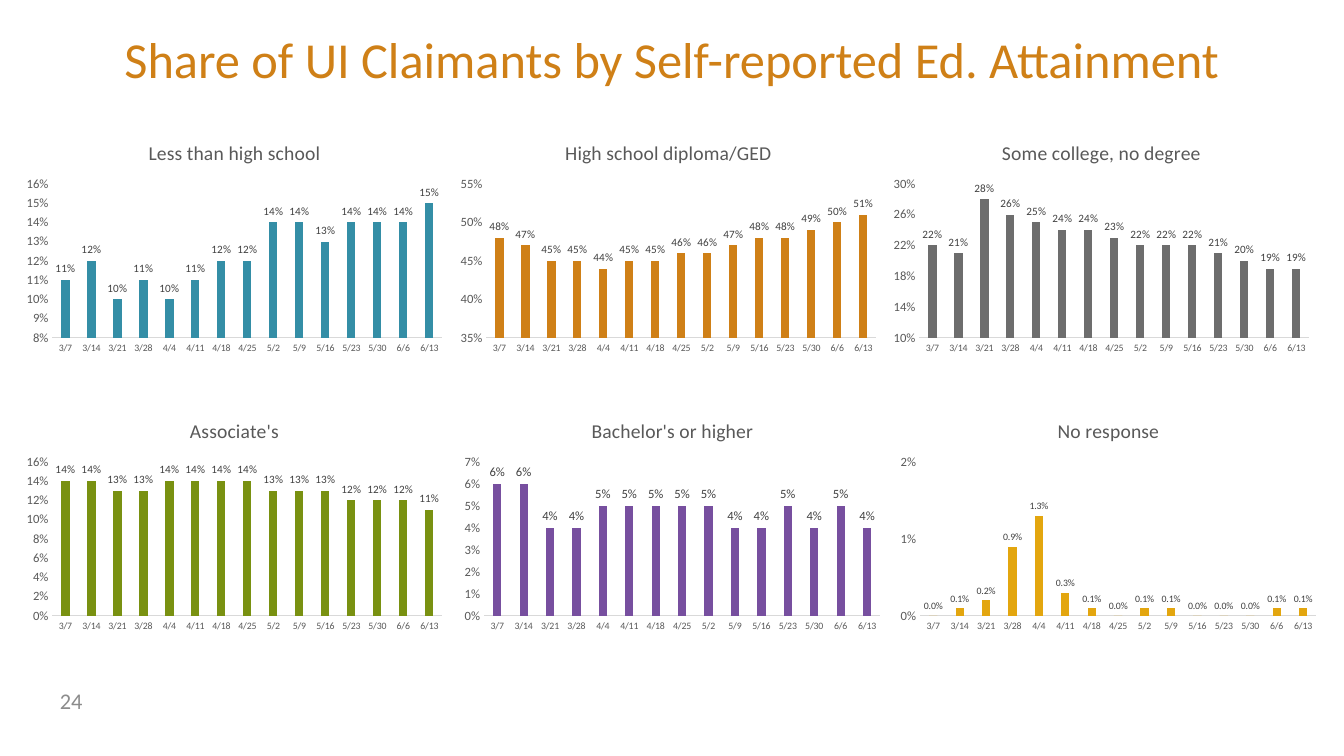
from pptx import Presentation
from pptx.chart.data import CategoryChartData
from pptx.dml.color import RGBColor
from pptx.enum.chart import XL_CHART_TYPE, XL_LABEL_POSITION, XL_TICK_MARK
from pptx.enum.text import MSO_ANCHOR, PP_ALIGN
from pptx.util import Pt

SCALE = 914400 / 100.8
FACE = "Calibri"
TEAL = RGBColor(0x34, 0x8E, 0xA6)
ORANGE = RGBColor(0xCF, 0x80, 0x17)
GRAY = RGBColor(0x6D, 0x6D, 0x6D)
GREEN = RGBColor(0x79, 0x91, 0x11)
PURPLE = RGBColor(0x77, 0x4F, 0x9F)
GOLD = RGBColor(0xE3, 0xA6, 0x0F)
BLACK = RGBColor(0, 0, 0)
DARK = RGBColor(0x40, 0x40, 0x40)
MUTED = RGBColor(0x59, 0x59, 0x59)
PALE = RGBColor(0x8C, 0x8C, 0x8C)
RULE = RGBColor(0xD9, 0xD9, 0xD9)


def px(*sizes):
    return [round(size * SCALE) for size in sizes]


def style(font, size, color):
    font.name, font.size, font.bold = FACE, Pt(size), False
    font.color.rgb = color


deck = Presentation()
deck.slide_width, deck.slide_height = px(1344, 756)
slide = deck.slides.add_slide(deck.slide_layouts[5])

# Title
title = slide.shapes.title
title.left, title.top, title.width, title.height = px(0, 30, 1344, 74)
frame = title.text_frame
frame.text = "Share of UI Claimants by Self-reported Ed. Attainment"
frame.margin_left = frame.margin_right = frame.margin_top = frame.margin_bottom = 0
frame.vertical_anchor = MSO_ANCHOR.MIDDLE
head = frame.paragraphs[0]
head.alignment = PP_ALIGN.CENTER
head.line_spacing = Pt(31)
style(head.runs[0].font, 36, ORANGE)

# Page number
frame = slide.shapes.add_textbox(*px(50, 681, 302, 40)).text_frame
frame.word_wrap = True
frame.vertical_anchor = MSO_ANCHOR.MIDDLE
frame.text = "24"
style(frame.paragraphs[0].runs[0].font, 16, PALE)

# Weeks and shares, in percent
weeks = ["3/7", "3/14", "3/21", "3/28", "4/4", "4/11", "4/18", "4/25",
         "5/2", "5/9", "5/16", "5/23", "5/30", "6/6", "6/13"]
# name, color, left, top, axis low, high and step, label size and format, shares
panels = [
    ("Less than high school", TEAL, 18, 126, 8, 16, 1, 8, "0%",
     [11, 12, 10, 11, 10, 11, 12, 12, 14, 14, 13, 14, 14, 14, 15]),
    ("High school diploma/GED", ORANGE, 452, 126, 35, 55, 5, 8, "0%",
     [48, 47, 45, 45, 44, 45, 45, 46, 46, 47, 48, 48, 49, 50, 51]),
    ("Some college, no degree", GRAY, 885, 126, 10, 30, 4, 8, "0%",
     [22, 21, 28, 26, 25, 24, 24, 23, 22, 22, 22, 21, 20, 19, 19]),
    ("Associate's", GREEN, 18, 404, 0, 16, 2, 8, "0%",
     [14, 14, 13, 13, 14, 14, 14, 14, 13, 13, 13, 12, 12, 12, 11]),
    ("Bachelor's or higher", PURPLE, 456, 404, 0, 7, 1, 9, "0%",
     [6, 6, 4, 4, 5, 5, 5, 5, 5, 4, 4, 5, 4, 5, 4]),
    ("No response", GOLD, 892, 404, 0, 2, 1, 7, "0.0%",
     [0, 0.1, 0.2, 0.9, 1.3, 0.3, 0.1, 0, 0.1, 0.1, 0, 0, 0, 0.1, 0.1]),
]

# Column charts
for name, color, left, top, low, high, step, size, form, shares in panels:
    data = CategoryChartData(number_format=form)
    data.categories = weeks
    data.add_series(name, [round(share / 100, 3) for share in shares])
    chart = slide.shapes.add_chart(
        XL_CHART_TYPE.COLUMN_CLUSTERED, *px(left, top, 433, 232), data).chart
    style(chart.font, 10, BLACK)
    chart.has_legend = False
    chart.has_title = True
    chart.chart_title.include_in_layout = False
    chart.chart_title.text_frame.text = name
    style(chart.chart_title.text_frame.paragraphs[0].runs[0].font, 14, MUTED)

    # Axes
    dates, scale = chart.category_axis, chart.value_axis
    for axis, points in ((dates, 7), (scale, 9)):
        axis.major_tick_mark = axis.minor_tick_mark = XL_TICK_MARK.NONE
        axis.has_major_gridlines = False
        style(axis.tick_labels.font, points, MUTED)
    dates.format.line.color.rgb = RULE
    dates.format.line.width = Pt(0.75)
    scale.format.line.fill.background()
    scale.minimum_scale, scale.maximum_scale = low / 100, high / 100
    scale.major_unit = step / 100
    scale.tick_labels.number_format = "0%"
    scale.tick_labels.number_format_is_linked = False

    # Columns and their labels
    plot = chart.plots[0]
    plot.gap_width, plot.overlap = 219, -27
    plot.vary_by_categories = False
    bars = plot.series[0]
    bars.format.fill.solid()
    bars.format.fill.fore_color.rgb = color
    bars.invert_if_negative = False
    labels = bars.data_labels
    labels.show_value = True
    labels.number_format = form
    labels.number_format_is_linked = False
    labels.position = XL_LABEL_POSITION.OUTSIDE_END
    style(labels.font, size, DARK)

deck.save("out.pptx")
